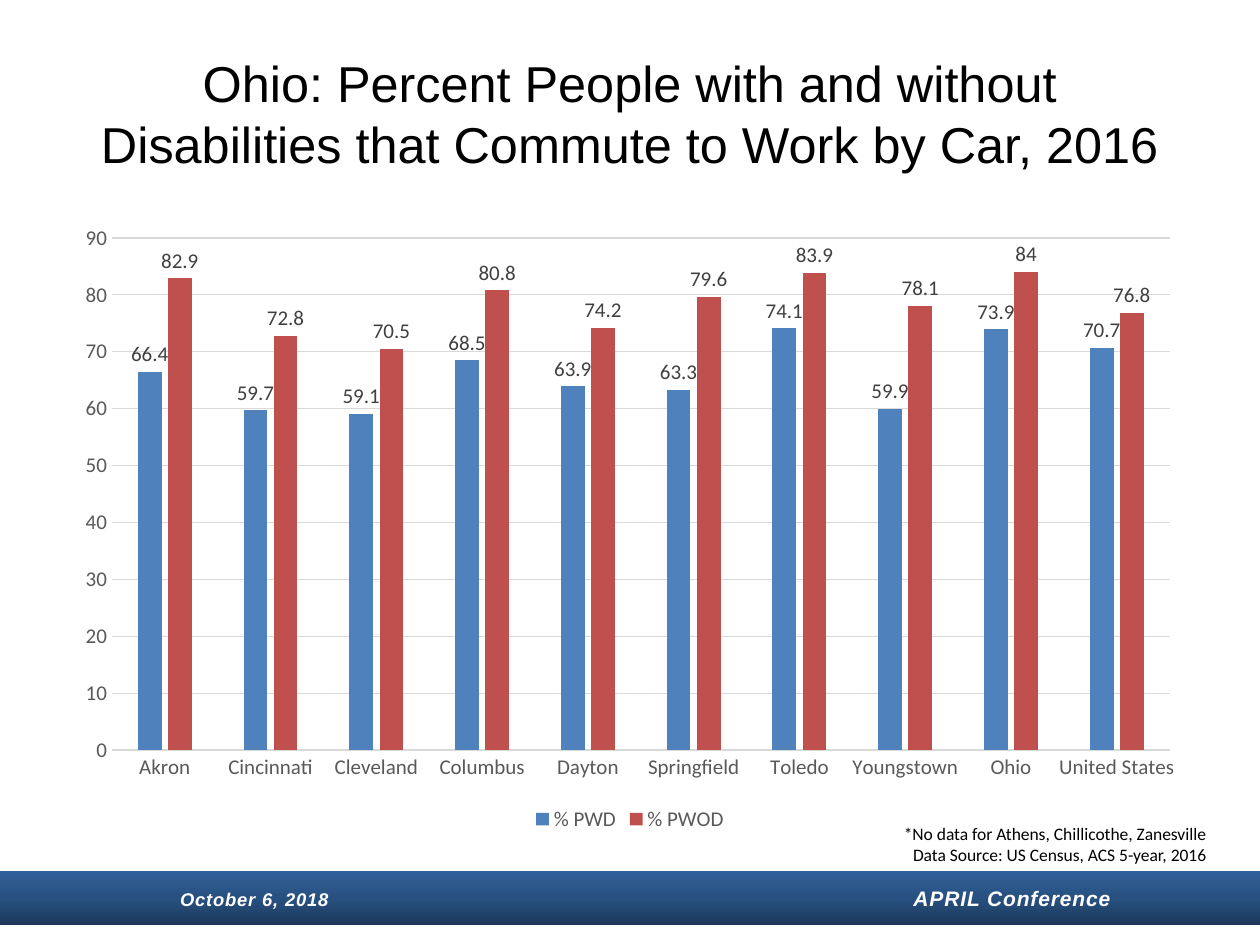
from copy import deepcopy
from pptx import Presentation
from pptx.chart.data import CategoryChartData
from pptx.dml.color import RGBColor
from pptx.enum.chart import XL_CHART_TYPE as ChartType, XL_LABEL_POSITION as LabelPos
from pptx.enum.chart import XL_LEGEND_POSITION as LegendPos, XL_TICK_MARK as Tick
from pptx.enum.shapes import MSO_SHAPE as Shape
from pptx.enum.text import MSO_ANCHOR as Anchor, PP_ALIGN as Align
from pptx.oxml.ns import qn
from pptx.util import Inches, Pt

WHITE = RGBColor(0xFF, 0xFF, 0xFF)
BLACK = RGBColor(0x00, 0x00, 0x00)
NAVY = RGBColor(0x1C, 0x39, 0x5B)
MID_BLUE = RGBColor(0x28, 0x51, 0x81)
LIGHT_BLUE = RGBColor(0x30, 0x60, 0x99)
GRID = RGBColor(0xD9, 0xD9, 0xD9)
AXIS_TEXT = RGBColor(0x59, 0x59, 0x59)
LABEL_TEXT = RGBColor(0x40, 0x40, 0x40)
BLUE = RGBColor(0x4F, 0x81, 0xBD)
RED = RGBColor(0xC0, 0x50, 0x4D)


def style_font(font, name, size, color):
    font.name = name
    font.size = Pt(size)
    font.color.rgb = color


def add_span(para, text, name, size, color):
    span = para.add_run()
    span.text = text
    style_font(span.font, name, size, color)
    return span


deck = Presentation()
deck.slide_width = Inches(10)
deck.slide_height = Inches(7.5)
page = deck.slides.add_slide(deck.slide_layouts[6])

footer = page.shapes.add_shape(Shape.RECTANGLE, Inches(0), Inches(6.91), Inches(10), Inches(0.43))
footer.shadow.inherit = False
footer.line.fill.background()
footer.fill.gradient()
footer.fill.gradient_angle = 90
stop_list = footer._element.spPr.find(qn("a:gradFill")).find(qn("a:gsLst"))
stop_list.append(deepcopy(stop_list[0]))
for stop, position, color in zip(footer.fill.gradient_stops, (0, 0.5, 1), (NAVY, MID_BLUE, LIGHT_BLUE)):
    stop.position = position
    stop.color.rgb = color

frame = footer.text_frame
frame.vertical_anchor = Anchor.MIDDLE
frame.margin_left = frame.margin_right = Inches(0)
para = frame.paragraphs[0]
para.alignment = Align.LEFT
tab_list = para._p.get_or_add_pPr().makeelement(qn("a:tabLst"), {})
para._p.get_or_add_pPr().append(tab_list)
for text, size, left in (("\tOctober 6, 2018", 10.5, 1.43), ("\tAPRIL Conference", 12, 7.25)):
    tab = tab_list.makeelement(qn("a:tab"), {"pos": str(Inches(left)), "algn": "l"})
    tab_list.append(tab)
    span = add_span(para, text, "Arial", size, WHITE)
    span.font.bold = True
    span.font.italic = True
    span._r.get_or_add_rPr().set("spc", "50")

title = page.shapes.add_textbox(Inches(0.5), Inches(0.27), Inches(9), Inches(1.25))
title.text_frame.word_wrap = True
title.text_frame.vertical_anchor = Anchor.MIDDLE
para = title.text_frame.paragraphs[0]
para.alignment = Align.CENTER
add_span(para, "Ohio: Percent People with and without Disabilities that Commute to Work by Car, 2016",
         "Arial", 28.8, BLACK)

data = CategoryChartData()
data.categories = ["Akron", "Cincinnati", "Cleveland", "Columbus", "Dayton",
                   "Springfield", "Toledo", "Youngstown", "Ohio", "United States"]
data.add_series("% PWD", (66.4, 59.7, 59.1, 68.5, 63.9, 63.3, 74.1, 59.9, 73.9, 70.7))
data.add_series("% PWOD", (82.9, 72.8, 70.5, 80.8, 74.2, 79.6, 83.9, 78.1, 84, 76.8))
chart = page.shapes.add_chart(ChartType.COLUMN_CLUSTERED, Inches(0.5), Inches(1.69),
                              Inches(9), Inches(4.95), data).chart
style_font(chart.font, "Calibri", 10, BLACK)
chart.has_title = False
chart.has_legend = True
chart.legend.position = LegendPos.BOTTOM
chart.legend.include_in_layout = False
style_font(chart.legend.font, "Calibri", 12, AXIS_TEXT)

for axis in (chart.category_axis, chart.value_axis):
    axis.major_tick_mark = axis.minor_tick_mark = Tick.NONE
    style_font(axis.tick_labels.font, "Calibri", 12, AXIS_TEXT)
chart.value_axis.minimum_scale = 0
chart.value_axis.maximum_scale = 90
chart.value_axis.major_unit = 10
chart.value_axis.has_major_gridlines = True
chart.value_axis.format.line.fill.background()
for line in (chart.category_axis.format.line, chart.value_axis.major_gridlines.format.line):
    line.color.rgb = GRID
    line.width = Pt(0.75)

plot = chart.plots[0]
plot.vary_by_categories = False
plot.gap_width = 219
plot.overlap = -27
for series, color in zip(plot.series, (BLUE, RED)):
    series.format.fill.solid()
    series.format.fill.fore_color.rgb = color
    labels = series.data_labels
    labels.show_value = True
    labels.position = LabelPos.OUTSIDE_END
    style_font(labels.font, "Calibri", 12, LABEL_TEXT)

source_note = page.shapes.add_textbox(Inches(1.42), Inches(6.48), Inches(8.25), Inches(0.44))
frame = source_note.text_frame
frame.word_wrap = True
lines = ("*No data for Athens, Chillicothe, Zanesville", "Data Source: US Census, ACS 5-year, 2016")
for para, text in zip((frame.paragraphs[0], frame.add_paragraph()), lines):
    para.alignment = Align.RIGHT
    add_span(para, text, "Calibri", 10, BLACK)

deck.save("out.pptx")
